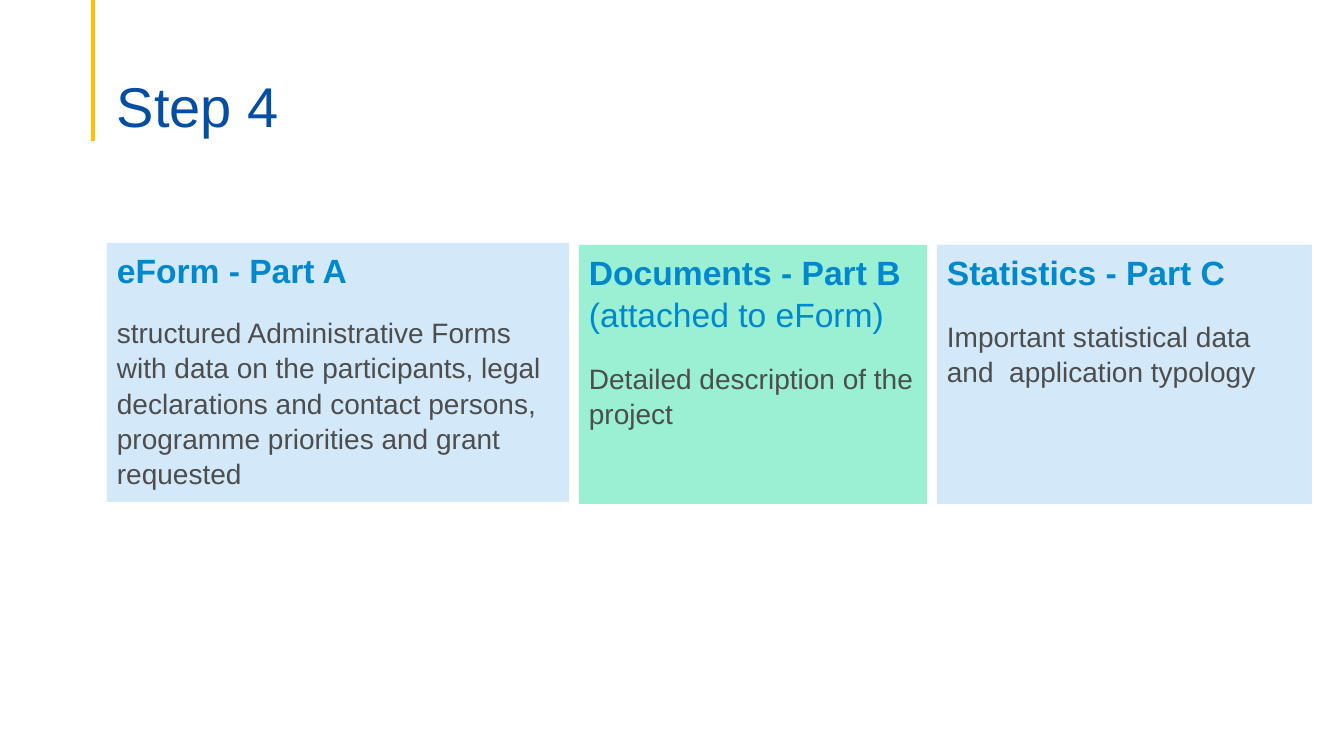
from pptx import Presentation
from pptx import util as u
from pptx.dml.color import RGBColor
from pptx.enum import shapes, text
from pptx.oxml.ns import qn
from lxml import etree

PX = 914400 / 100.8
FONT = "Arial"
GOLD = RGBColor(0xFF, 0xC0, 0x00)
NAVY = RGBColor(0x03, 0x4E, 0xA2)
BLUE = RGBColor(0x00, 0x88, 0xCE)
GREY = RGBColor(0x4D, 0x4D, 0x4D)
PALE_BLUE = RGBColor(0xD3, 0xE8, 0xF9)
MINT = RGBColor(0x9B, 0xEF, 0xD3)

CARD_HEIGHT = 259

# left, top, width, fill, heading, heading note, body, space after heading, space before body
CARDS = [
    (107, 243, 462, PALE_BLUE, "eForm - Part A", "",
     "structured Administrative Forms with data on the participants, legal "
     "declarations and contact persons, programme priorities and grant requested",
     12, 5),
    (579, 245, 348, MINT, "Documents - Part B ", "(attached to eForm)",
     "Detailed description of the project", 18, 0),
    (937, 245, 375, PALE_BLUE, "Statistics - Part C", "",
     "Important statistical data and  application typology", 18, 0),
]


def px(n):
    return u.Emu(round(n * PX))


def add_run(p, words, size, color, bold=False):
    r = p.add_run()
    r.text = words
    r.font.name = FONT
    r.font.size = u.Pt(size)
    r.font.bold = bold
    r.font.color.rgb = color


def add_accent_line(s):
    line = s.shapes.add_connector(
        shapes.MSO_CONNECTOR.STRAIGHT, px(93), 0, px(93), px(141))
    line.line.color.rgb = GOLD
    line.line.width = u.Pt(2.25)
    etree.SubElement(line._element.spPr, qn("a:effectLst"))


def add_title(s, words):
    sp = s.shapes.add_textbox(px(107), px(53), px(1159), px(87))
    tf = sp.text_frame
    tf.word_wrap = True
    tf.vertical_anchor = text.MSO_ANCHOR.BOTTOM
    tf.margin_bottom = 0
    p = tf.paragraphs[0]
    p.line_spacing = 0.9
    add_run(p, words, 40, NAVY)


def add_card(s, left, top, width, fill, heading, note, body, after, before):
    sp = s.shapes.add_shape(shapes.MSO_SHAPE.RECTANGLE,
                            px(left), px(top), px(width), px(CARD_HEIGHT))
    sp.shadow.inherit = False
    sp.fill.solid()
    sp.fill.fore_color.rgb = fill
    sp.line.fill.background()
    tf = sp.text_frame
    tf.word_wrap = True
    tf.vertical_anchor = text.MSO_ANCHOR.TOP

    p = tf.paragraphs[0]
    p.space_after = u.Pt(after)
    add_run(p, heading, 24, BLUE, bold=True)
    if note:
        add_run(p, note, 24, BLUE)

    p = tf.add_paragraph()
    p.space_before = u.Pt(before)
    add_run(p, body, 20, GREY)

    for p in tf.paragraphs:
        p.alignment = text.PP_ALIGN.LEFT
        p.line_spacing = 1.05


def main():
    prs = Presentation()
    prs.slide_width, prs.slide_height = px(1344), px(756)
    s = prs.slides.add_slide(prs.slide_layouts[6])
    add_accent_line(s)
    add_title(s, "Step 4")
    for card in CARDS:
        add_card(s, *card)
    prs.save("out.pptx")


if __name__ == "__main__":
    main()
